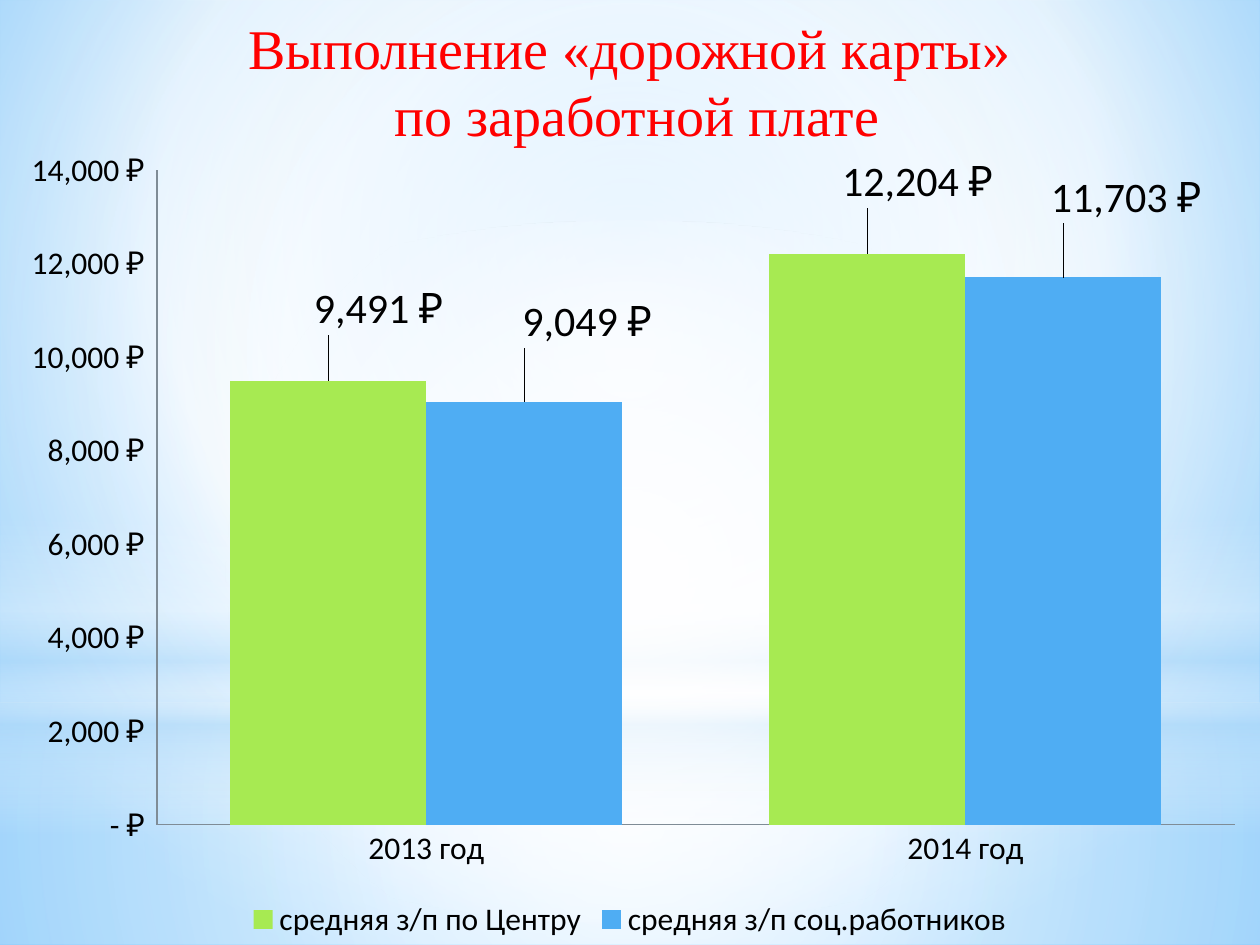
from dataclasses import dataclass
from typing import Optional

from lxml import etree
from pptx import Presentation, util as u
from pptx.chart.data import CategoryChartData
from pptx.dml.color import RGBColor
from pptx.enum import chart as ch, shapes, text
from pptx.oxml import parse_xml
from pptx.oxml.ns import nsdecls, qn

W, H = 1260, 945
COLORS = {
    "white": "FFFFFF", "mist": "B4DCFA", "sky": "9ED5FF", "deep": "5BB9FF",
    "title": "FF0000", "text": "000000", "axis": "7F8C96",
    "center": "A7EA52", "social": "4FADF3",
}
RUBLES = (r'_-* #,##0\ [$₽-419]_-;\-* #,##0\ [$₽-419]_-;'
          r'_-* "-"\ [$₽-419]_-;_-@_-')


def px(n: float) -> int:
    return round(n * 914400 / 126)


def rgb(name: str) -> RGBColor:
    return RGBColor.from_string(COLORS[name])


@dataclass
class Gradient:
    stops: list  # (position %, colour name, opacity %)
    center: Optional[tuple] = None  # left, top, right, bottom %; None is vertical


@dataclass
class Glow:
    kind: shapes.MSO_SHAPE
    top: int
    height: int
    gradient: Gradient


@dataclass
class Series:
    name: str
    values: tuple
    color: str
    label_shift: tuple  # fractions of the chart's width and height


MIDDLE = (50, 50, 50, 50)
BACKDROP = Gradient([(0, "sky", 100), (60, "white", 100), (100, "deep", 100)],
                    (20, 10, 20, 60))
RECT, OVAL = shapes.MSO_SHAPE.RECTANGLE, shapes.MSO_SHAPE.OVAL
GLOWS = [
    Glow(RECT, 703, 242, Gradient(
        [(0, "white", 91), (37, "white", 76), (100, "mist", 79)], MIDDLE)),
    Glow(RECT, 0, 703, Gradient(
        [(0, "white", 89), (48, "white", 62), (100, "mist", 79)], MIDDLE)),
    Glow(RECT, 519, 315, Gradient(
        [(0, "white", 0), (29, "white", 30), (45, "mist", 40),
         (55, "white", 26), (65, "mist", 60), (100, "white", 0)])),
    Glow(OVAL, 221, 703, Gradient([(0, "white", 100), (56, "white", 0)], MIDDLE)),
]
YEARS = ("2013 год", "2014 год")
SALARIES = [
    Series("средняя з/п по Центру", (9491, 12204), "center", (0.04, -0.05)),
    Series("средняя з/п соц.работников", (9049, 11703), "social", (0.05, -0.06)),
]


def apply_gradient(fill, element, gradient: Gradient) -> None:
    """Give a fill a gradient with transparent stops."""
    fill.gradient()
    old = next(element.iter(qn("a:gradFill")))
    stops = "".join(
        f'<a:gs pos="{pos * 1000}"><a:srgbClr val="{COLORS[color]}">'
        f'<a:alpha val="{alpha * 1000}"/></a:srgbClr></a:gs>'
        for pos, color, alpha in gradient.stops)
    if gradient.center:
        sides = " ".join(f'{side}="{v * 1000}"'
                         for side, v in zip("ltrb", gradient.center))
        shade = f'<a:path path="circle"><a:fillToRect {sides}/></a:path>'
    else:
        shade = '<a:lin ang="5400000" scaled="0"/>'
    old.getparent().replace(old, parse_xml(
        f'<a:gradFill {nsdecls("a")} rotWithShape="1">'
        f'<a:gsLst>{stops}</a:gsLst>{shade}</a:gradFill>'))


def draw_glow(s, glow: Glow) -> None:
    sp = s.shapes.add_shape(glow.kind, 0, px(glow.top), px(W), px(glow.height))
    sp.shadow.inherit = False
    sp.line.fill.background()
    apply_gradient(sp.fill, sp._element, glow.gradient)


def draw_title(s, lines: tuple) -> None:
    sp = s.shapes.add_textbox(0, px(7), px(W), px(135))
    tf = sp.text_frame
    tf.word_wrap = True
    tf.vertical_anchor = text.MSO_ANCHOR.TOP
    tf.text = "\n".join(lines)
    for p in tf.paragraphs:
        p.alignment = text.PP_ALIGN.CENTER
        for r in p.runs:
            style_font(r.font, 32, "title", "Times New Roman")


def style_font(font, size: int, color: str = "text", name: str = "Calibri") -> None:
    font.size, font.name = u.Pt(size), name
    font.color.rgb = rgb(color)


def manual_layout(**values):
    """Build a chart layout from named c: elements, in schema order."""
    layout = etree.Element(qn("c:layout"))
    manual = etree.SubElement(layout, qn("c:manualLayout"))
    for tag, value in values.items():
        etree.SubElement(manual, qn(f"c:{tag}")).set("val", str(value))
    return layout


def style_series(series, row: Series) -> None:
    series.format.fill.solid()
    series.format.fill.fore_color.rgb = rgb(row.color)
    series.invert_if_negative = False
    labels = series.data_labels
    labels.show_value = True
    labels.number_format, labels.number_format_is_linked = RUBLES, False
    style_font(labels.font, 24)
    dx, dy = row.label_shift
    for i in range(len(row.values)):
        label = series.points[i].data_label
        style_font(label.font, 24)
        label.position = ch.XL_LABEL_POSITION.OUTSIDE_END
        element = labels._element.findall(qn("c:dLbl"))[i]
        element.insert(1, manual_layout(x=dx, y=dy))


def draw_chart(s) -> None:
    data = CategoryChartData(number_format=RUBLES)
    data.categories = YEARS
    for row in SALARIES:
        data.add_series(row.name, row.values)
    chart = s.shapes.add_chart(ch.XL_CHART_TYPE.COLUMN_CLUSTERED, 0, px(135),
                               px(W), px(810), data).chart
    chart.has_title = False
    style_font(chart.font, 18)
    chart.has_legend = True
    chart.legend.position = ch.XL_LEGEND_POSITION.BOTTOM
    chart.legend.include_in_layout = False

    # Axes
    value_axis = chart.value_axis
    value_axis.minimum_scale, value_axis.maximum_scale = 0, 14000
    value_axis.major_unit = 2000
    value_axis.has_major_gridlines = False
    value_axis.tick_labels.number_format = RUBLES
    value_axis.tick_labels.number_format_is_linked = False
    for axis in (value_axis, chart.category_axis):
        axis.major_tick_mark = axis.minor_tick_mark = ch.XL_TICK_MARK.NONE
        axis.format.line.color.rgb = rgb("axis")
        axis.format.line.width = u.Pt(0.75)

    # Columns and their labels
    plot = chart.plots[0]
    plot.gap_width, plot.overlap, plot.vary_by_categories = 75, 0, False
    for series, row in zip(plot.series, SALARIES):
        style_series(series, row)

    # Plot area
    area = next(chart._chartSpace.iter(qn("c:plotArea")))
    for old in area.findall(qn("c:layout")):
        area.remove(old)
    area.insert(0, manual_layout(layoutTarget="inner", xMode="edge", yMode="edge",
                                 x=round(157 / W, 4), y=round(35 / 810, 4),
                                 w=round(1078 / W, 4), h=round(655 / 810, 4)))


def main() -> None:
    prs = Presentation()
    prs.slide_width, prs.slide_height = px(W), px(H)
    s = prs.slides.add_slide(prs.slide_layouts[6])

    # Backdrop
    apply_gradient(s.background.fill, s._element, BACKDROP)
    for glow in GLOWS:
        draw_glow(s, glow)

    # Content
    draw_title(s, ("Выполнение «дорожной карты»", " по заработной плате"))
    draw_chart(s)
    prs.save("out.pptx")


if __name__ == "__main__":
    main()
